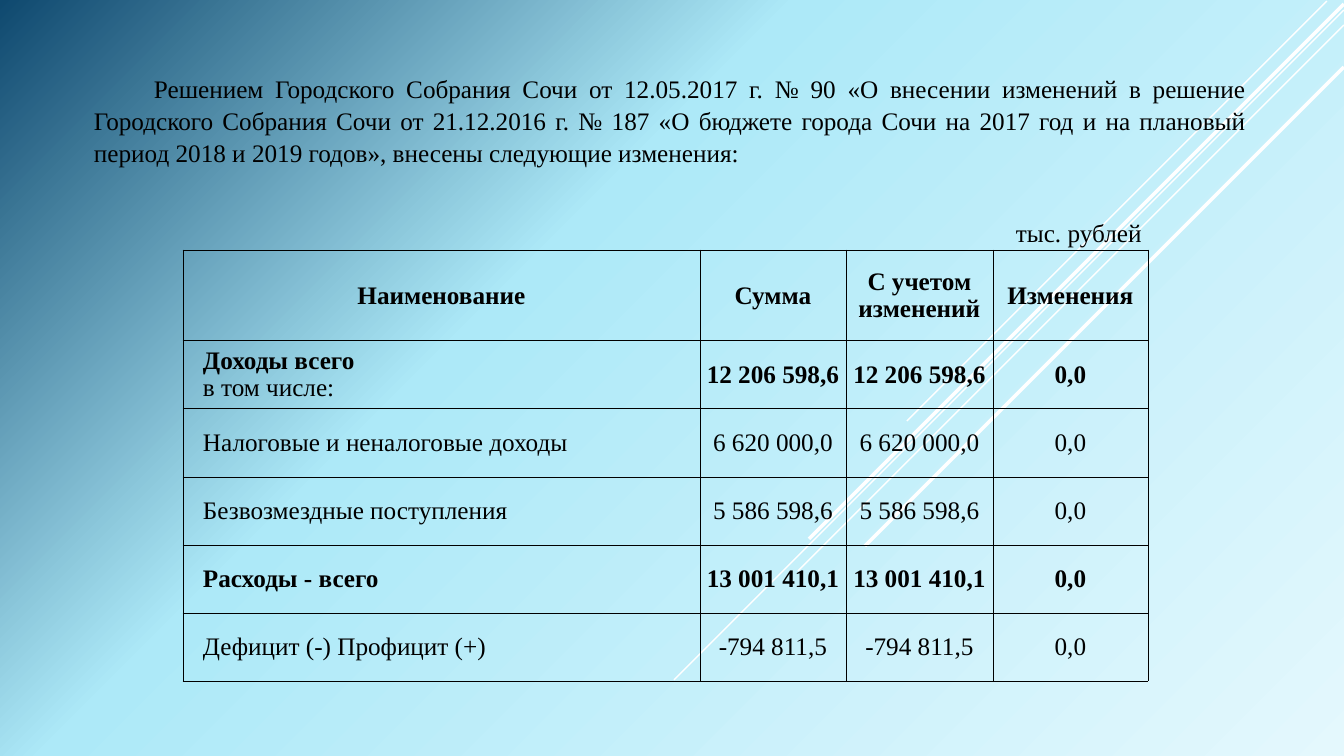
import pptx
import pptx.dml.color
import pptx.enum.shapes
import pptx.enum.text
import pptx.oxml
import pptx.oxml.ns
import pptx.util

RGBColor = pptx.dml.color.RGBColor
ALIGN = pptx.enum.text.PP_ALIGN

BLACK = RGBColor(0x00, 0x00, 0x00)
WHITE = RGBColor(0xFF, 0xFF, 0xFF)
PALE_BLUE = RGBColor(0xE4, 0xF8, 0xFD)
SKY_BLUE = RGBColor(0xAD, 0xE9, 0xF8)
DEEP_BLUE = RGBColor(0x0F, 0x49, 0x6F)

SLIDE_WIDTH, SLIDE_HEIGHT = 1344, 756
EMU_PER_PX = 12192000 / SLIDE_WIDTH

# start x, start y, run along the 45-degree diagonal (px), weight (pt)
DIAGONALS = [
    (1327, 1, 420, 1),
    (1344, 10, 670, 1),
    (1344, 25, 546, 1),
    (1344, 4, 535, 2.5),
    (1344, 67, 479, 2.5),
]

INTRO = (
    "Решением Городского Собрания Сочи от 12.05.2017 г. № 90 «О внесении изменений "
    "в решение Городского Собрания Сочи от 21.12.2016 г. № 187 «О бюджете города Сочи "
    "на 2017 год и на плановый период 2018 и 2019 годов», внесены следующие изменения:"
)

BUDGET_ROWS = [
    ("Наименование", "Сумма", "С учетом изменений", "Изменения"),
    ("Доходы всего\nв том числе:", "12 206 598,6", "12 206 598,6", "0,0"),
    ("Налоговые и неналоговые доходы", "6 620 000,0", "6 620 000,0", "0,0"),
    ("Безвозмездные поступления", "5 586 598,6", "5 586 598,6", "0,0"),
    ("Расходы - всего", "13 001 410,1", "13 001 410,1", "0,0"),
    ("Дефицит (-) Профицит (+)", "-794 811,5", "-794 811,5", "0,0"),
]
BOLD_ROWS = {0, 1, 4}
COLUMN_WIDTHS = [517, 146, 147, 155]
ROW_HEIGHTS = [90, 68, 69, 68, 68, 68]


def px(length):
    return pptx.util.Emu(round(length * EMU_PER_PX))


class SlideBuilder:
    font_name = "Times New Roman"
    font_size = pptx.util.Pt(18)

    def __init__(self, slide):
        self.slide = slide

    def background(self, stops):
        """Radial gradient spreading from the bottom right corner."""
        stop_xml = "".join(
            f'<a:gs pos="{percent * 1000}"><a:srgbClr val="{color}"/></a:gs>'
            for percent, color in stops
        )
        background = pptx.oxml.parse_xml(
            f'<p:bg {pptx.oxml.ns.nsdecls("p", "a")}><p:bgPr>'
            f'<a:gradFill rotWithShape="1"><a:gsLst>{stop_xml}</a:gsLst>'
            '<a:path path="circle"><a:fillToRect l="100000" t="100000"/></a:path>'
            "</a:gradFill><a:effectLst/></p:bgPr></p:bg>"
        )
        self.slide.element.cSld.insert(0, background)

    def diagonal(self, x, y, run, weight):
        line = self.slide.shapes.add_connector(
            pptx.enum.shapes.MSO_CONNECTOR.STRAIGHT,
            px(x), px(y), px(x - run), px(y + run),
        )
        line.line.color.rgb = WHITE
        line.line.width = pptx.util.Pt(weight)
        properties = line.element.spPr
        properties.append(properties.makeelement(pptx.oxml.ns.qn("a:effectLst"), {}))

    def format_paragraph(self, paragraph, alignment, bold=False):
        paragraph.alignment = alignment
        for run in paragraph.runs:
            run.font.name = self.font_name
            run.font.size = self.font_size
            run.font.bold = bold
            run.font.color.rgb = BLACK

    def text(self, text, left, top, width, height, alignment=ALIGN.LEFT,
             first_indent=0, line_spacing=1.0):
        box = self.slide.shapes.add_textbox(px(left), px(top), px(width), px(height))
        box.text_frame.word_wrap = True
        box.text_frame.text = text
        paragraph = box.text_frame.paragraphs[0]
        paragraph.line_spacing = line_spacing
        self.format_paragraph(paragraph, alignment)
        if first_indent:
            properties = paragraph._p.get_or_add_pPr()
            properties.set("marL", "0")
            properties.set("indent", str(px(first_indent)))

    def cell_borders(self, cell):
        properties = cell._tc.get_or_add_tcPr()
        for index, side in enumerate(("lnL", "lnR", "lnT", "lnB")):
            border = pptx.oxml.parse_xml(
                f'<a:{side} {pptx.oxml.ns.nsdecls("a")} w="{pptx.util.Pt(0.5)}">'
                f'<a:solidFill><a:srgbClr val="{BLACK}"/></a:solidFill></a:{side}>'
            )
            properties.insert(index, border)

    def table(self, rows, left, top, column_widths, row_heights, bold_rows):
        frame = self.slide.shapes.add_table(
            len(rows), len(column_widths), px(left), px(top),
            px(sum(column_widths)), px(sum(row_heights)),
        )
        table = frame.table
        table.first_row = table.horz_banding = False
        for column, width in zip(table.columns, column_widths):
            column.width = px(width)
        for row, height in zip(table.rows, row_heights):
            row.height = px(height)
        for row_index, values in enumerate(rows):
            for column_index, value in enumerate(values):
                cell = table.cell(row_index, column_index)
                is_label = row_index > 0 and column_index == 0
                cell.fill.background()
                self.cell_borders(cell)
                cell.vertical_anchor = pptx.enum.text.MSO_ANCHOR.MIDDLE
                cell.margin_left = px(20 if is_label else 1)
                cell.margin_right = cell.margin_top = px(1)
                cell.margin_bottom = 0
                cell.text_frame.text = value
                for line_index, paragraph in enumerate(cell.text_frame.paragraphs):
                    self.format_paragraph(
                        paragraph,
                        ALIGN.LEFT if is_label else ALIGN.CENTER,
                        bold=row_index in bold_rows and line_index == 0,
                    )


def main():
    presentation = pptx.Presentation()
    presentation.slide_width = px(SLIDE_WIDTH)
    presentation.slide_height = px(SLIDE_HEIGHT)
    blank_layout = presentation.slide_layouts[6]
    builder = SlideBuilder(presentation.slides.add_slide(blank_layout))

    builder.background([(0, PALE_BLUE), (62, SKY_BLUE), (100, DEEP_BLUE)])
    for diagonal in DIAGONALS:
        builder.diagonal(*diagonal)
    builder.text("тыс. рублей", 1006, 211, 193, 40, line_spacing=1.05)
    builder.text(INTRO, 84, 67, 1172, 102, ALIGN.JUSTIFY,
                 first_indent=60, line_spacing=1.05)
    builder.table(BUDGET_ROWS, 183, 250, COLUMN_WIDTHS, ROW_HEIGHTS, BOLD_ROWS)

    presentation.save("out.pptx")


if __name__ == "__main__":
    main()
